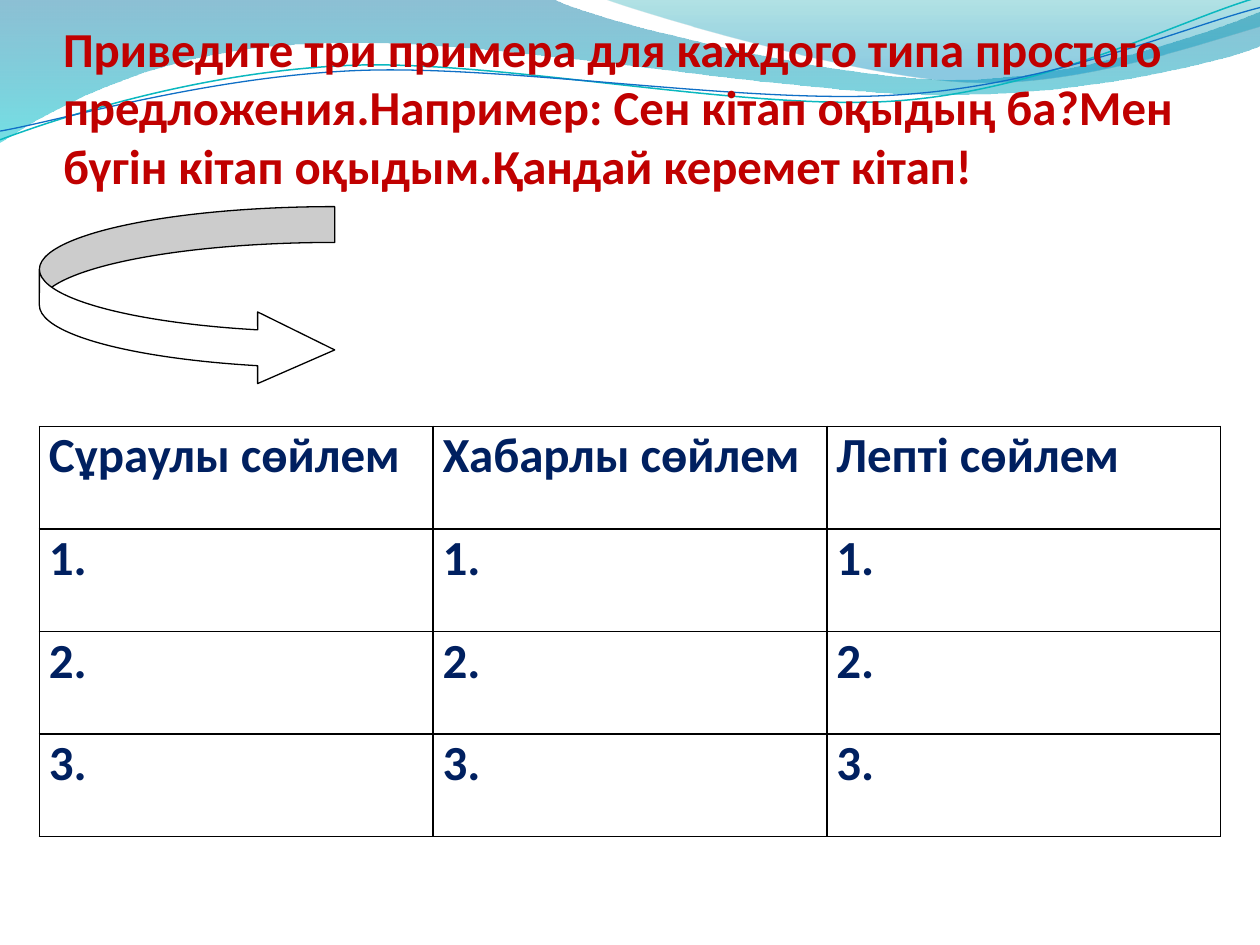
from lxml import etree
from pptx import Presentation
from pptx import util as u
from pptx.dml.color import RGBColor
from pptx.enum import shapes, text
from pptx.oxml import parse_xml
from pptx.oxml.ns import nsdecls, qn

Pt = u.Pt
COLORS = {
    "title": "C00000", "table": "002060", "border": "000000", "white": "FFFFFF",
    "deep": "0074A1", "cyan": "00C6CF", "teal": "00A1A9", "blue": "008BBF",
    "teal_line": "0AB8BF", "blue_line": "0F6FC6",
}
TITLE = ("Приведите три примера для каждого типа простого "
         "предложения.Например: Сен кітап оқыдың ба?Мен "
         "бүгін кітап оқыдым.Қандай керемет кітап!")
HEADERS = ["Сұраулы сөйлем", "Хабарлы сөйлем", "Лепті сөйлем"]
ROWS = [HEADERS] + [[f"{number}."] * len(HEADERS) for number in (1, 2, 3)]

# Wave outlines in points: a pair is a corner, six numbers are a Bezier curve
WIDE_WAVE = [(0, 0), (316.8, -0.5), (342.7, 12.2, 478.1, 45.4, 545.8, 45.4),
             (614.2, 45.4, 689.8, 18.7, 720, 6.5), (720.5, 25.9),
             (707.8, 31.7, 626.4, 54.7, 537.1, 54), (447.8, 54, 275, 20.2, 185, 24.5),
             (92.9, 25.9, 33.1, 59.8, -0.5, 81.4)]
RIGHT_WAVE = [(344.9, -0.5), (366.5, 7.9, 491, 44.6, 553.7, 46.8),
              (616.3, 49.7, 691.9, 23, 720, 15.1), (720, 0)]
TEAL_CURVE = [(0, 79.9), (34.6, 67, 113.8, 41, 199.4, 37.4),
              (284.4, 33.8, 427, 64.1, 513.4, 57.6), (599.8, 51.1, 675.4, 10.8, 718.6, -1.4)]
BLUE_CURVE = [(0, 74.9), (33.8, 69.1, 118.1, 43.9, 203.8, 40.3),
              (290.2, 36.7, 430.6, 60.5, 516.2, 54), (601.9, 48.2, 677.5, 15.1, 720, 4.3)]


class SlideWriter:
    font = "Calibri"

    def __init__(self, page):
        self.page = page

    def color(self, name):
        return RGBColor.from_string(COLORS[name])

    def style(self, para, size, color):
        para.font.name = self.font
        para.font.size = Pt(size)
        para.font.bold = True
        para.font.color.rgb = self.color(color)

    def outline(self, segments, close):
        points = [(Pt(x), Pt(y)) for segment in segments
                  for x, y in zip(segment[::2], segment[1::2])]
        builder = self.page.shapes.build_freeform(*points[0])
        builder.add_line_segments(points[1:], close=close)
        shape = builder.convert_to_shape()
        shape.shadow.inherit = False
        # Gather each three control points into one Bezier curve
        lines = iter(list(shape._element.iter(qn("a:lnTo"))))
        for segment in segments[1:]:
            first = next(lines)
            if len(segment) == 6:
                bezier = etree.Element(qn("a:cubicBezTo"))
                first.addprevious(bezier)
                for line in (first, next(lines), next(lines)):
                    bezier.append(line[0])
                    line.getparent().remove(line)
        return shape

    def wave(self, segments, stops):
        shape = self.outline(segments, close=True)
        shape.line.fill.background()
        shape.fill.gradient()
        gradient = shape.fill._xPr.find(qn("a:gradFill"))
        marks = "".join(
            f'<a:gs pos="{place * 1000}"><a:srgbClr val="{COLORS[name]}">'
            f'<a:alpha val="{alpha * 1000}"/></a:srgbClr></a:gs>'
            for place, name, alpha in stops)
        gradient.getparent().replace(gradient, parse_xml(
            f'<a:gradFill {nsdecls("a")} rotWithShape="1"><a:gsLst>{marks}</a:gsLst>'
            '<a:lin ang="5400000" scaled="0"/></a:gradFill>'))

    def curve(self, segments, color, width):
        shape = self.outline(segments, close=False)
        shape.fill.background()
        shape.line.color.rgb = self.color(color)
        shape.line.width = Pt(width)

    def title(self, words, left, top, width, height):
        box = self.page.shapes.title
        box.left, box.top, box.width, box.height = map(Pt, (left, top, width, height))
        frame = box.text_frame
        frame.text = words
        frame.word_wrap = True
        frame.auto_size = text.MSO_AUTO_SIZE.NONE
        frame.vertical_anchor = text.MSO_ANCHOR.BOTTOM
        frame.margin_left = frame.margin_right = frame.margin_top = 0
        para = frame.paragraphs[0]
        para.alignment = text.PP_ALIGN.LEFT
        self.style(para, 27.9, "title")
        # Bring the title in front of the waves
        self.page.shapes._spTree.append(box._element)

    def borders(self, cell):
        properties = cell._tc.get_or_add_tcPr()
        for side in ("lnL", "lnR", "lnT", "lnB"):
            line = etree.SubElement(properties, qn(f"a:{side}"), w=str(Pt(1)))
            fill = etree.SubElement(line, qn("a:solidFill"))
            etree.SubElement(fill, qn("a:srgbClr"), val=COLORS["border"])

    def table(self, rows, left, top, column_width, row_height):
        count = len(rows[0])
        table = self.page.shapes.add_table(
            len(rows), count, Pt(left), Pt(top),
            Pt(column_width * count), Pt(row_height * len(rows))).table
        table.first_row = table.horz_banding = False
        for row_index, row in enumerate(rows):
            for column_index, words in enumerate(row):
                cell = table.cell(row_index, column_index)
                cell.text = words
                cell.margin_left = cell.margin_right = Pt(5.4)
                cell.margin_top = cell.margin_bottom = 0
                self.style(cell.text_frame.paragraphs[0], 28, "table")
                self.borders(cell)
                cell.fill.background()

    def curved_arrow(self, left, top, width, height, adjustments):
        shape = self.page.shapes.add_shape(
            shapes.MSO_SHAPE.CURVED_RIGHT_ARROW, *map(Pt, (left, top, width, height)))
        for index, value in enumerate(adjustments):
            shape.adjustments[index] = value
        shape.shadow.inherit = False
        shape.fill.solid()
        shape.fill.fore_color.rgb = self.color("white")
        shape.line.color.rgb = self.color("border")
        shape.line.width = Pt(0.75)


def main():
    deck = Presentation()
    deck.slide_width, deck.slide_height = Pt(720), Pt(540)
    writer = SlideWriter(deck.slides.add_slide(deck.slide_layouts[5]))

    # Waves along the top edge
    writer.wave(WIDE_WAVE, [(0, "deep", 45), (100, "cyan", 55)])
    writer.wave(RIGHT_WAVE, [(0, "teal", 30), (80, "blue", 45)])
    writer.curve(TEAL_CURVE, "teal_line", 0.85)
    writer.curve(BLUE_CURVE, "blue_line", 0.75)

    # Task, answer table and arrow pointing from one to the other
    writer.title(TITLE, 36, 9.5, 648, 105)
    writer.table(ROWS, 22.5, 243.6, 225, 58.6)
    writer.curved_arrow(22.5, 118.1, 168.75, 102.4, (0.2, 0.4, 0.43))

    deck.save("out.pptx")


if __name__ == "__main__":
    main()
